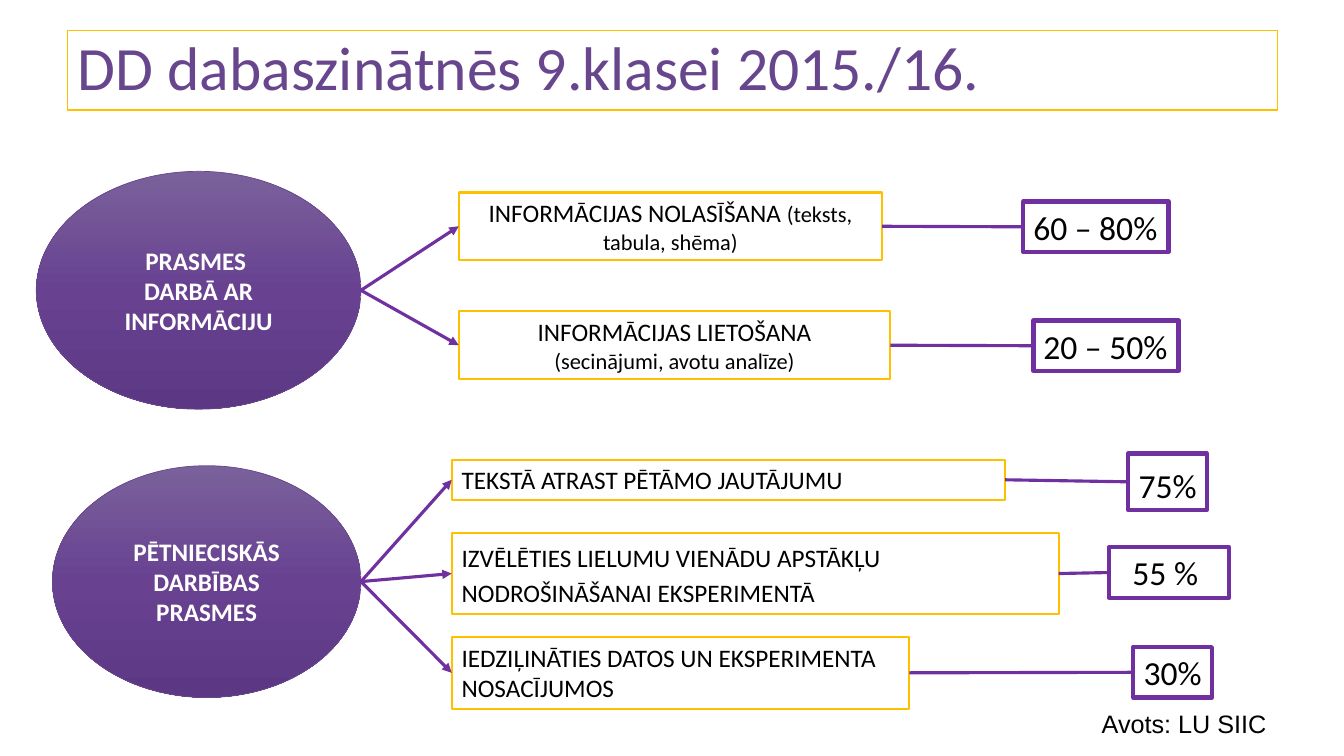
from copy import deepcopy
from pptx import Presentation
from pptx.dml.color import RGBColor
from pptx.enum.shapes import MSO_CONNECTOR, MSO_SHAPE
from pptx.enum.text import MSO_ANCHOR, MSO_AUTO_SIZE, PP_ALIGN as AL
from pptx.oxml import parse_xml
from pptx.oxml.ns import nsdecls, qn
from pptx.util import Pt

PX = 9144
GOLD, PURPLE, VIOLET, BLACK, WHITE = "FFC000", "7030A0", "68468D", "000000", "FFFFFF"
GRADIENT = [(0, "7A619B"), (0.5, "684291"), (1, "5C3884")]


def rgb(value):
    return RGBColor.from_string(value)


def write(sp, paragraphs, align, color=BLACK, font="Calibri", bold=False):
    tf = sp.text_frame
    tf.word_wrap = True
    for i, runs in enumerate(paragraphs):
        p = tf.add_paragraph() if i else tf.paragraphs[0]
        p.alignment = align
        for text, size in runs:
            r = p.add_run()
            r.text = text
            r.font.name, r.font.size, r.font.bold = font, Pt(size), bold
            r.font.color.rgb = rgb(color)
    return tf


prs = Presentation()
prs.slide_width, prs.slide_height = 1333 * PX, 750 * PX
s = prs.slides.add_slide(prs.slide_layouts[5])

title = s.shapes.title
title.left, title.top, title.width, title.height = [v * PX for v in (67, 30, 1200, 79)]
title.fill.solid()
title.fill.fore_color.rgb = rgb(WHITE)
title.line.color.rgb = rgb(GOLD)
title.line.width = Pt(1)
tf = write(title, [[("DD dabaszinātnēs 9.klasei 2015./16.", 44)]], AL.LEFT, VIOLET)
tf.vertical_anchor = MSO_ANCHOR.MIDDLE
tf.auto_size = MSO_AUTO_SIZE.NONE
tf.paragraphs[0].line_spacing = 0.9

# each row: skill box, its text, alignment, result box, its text, alignment, wrap, spaced boxes
skill_groups = [
    ((36, 170, 322, 236), ["PRASMES ", "DARBĀ AR INFORMĀCIJU"], [
        ((455, 191, 420, 67), [[("INFORMĀCIJAS NOLASĪŠANA ", 18), ("(teksts, tabula, shēma)", 16)]],
         AL.CENTER, (1015, 200, 144, 50), "60 – 80%", AL.LEFT, False, ()),
        ((455, 309, 428, 67), [[("INFORMĀCIJAS LIETOŠANA", 18)], [("(secinājumi, avotu analīze)", 16)]],
         AL.CENTER, (1025, 318, 144, 50), "20 – 50%", AL.LEFT, False, ()),
    ]),
    ((52, 462, 306, 230), ["PĒTNIECISKĀS DARBĪBAS PRASMES"], [
        ((448, 456, 549, 40), [[("TEKSTĀ ATRAST PĒTĀMO JAUTĀJUMU", 18)]],
         AL.LEFT, (1119, 450, 78, 56), "75% ", AL.CENTER, False, ("result",)),
        ((448, 529, 602, 80), [[("IZVĒLĒTIES LIELUMU VIENĀDU APSTĀKĻU NODROŠINĀŠANAI EKSPERIMENTĀ", 18)]],
         AL.LEFT, (1100, 543, 119, 50), "55 % ", AL.CENTER, True, ("skill",)),
        ((448, 632, 454, 71), [[("IEDZIĻINĀTIES DATOS UN EKSPERIMENTA NOSACĪJUMOS", 18)]],
         AL.LEFT, (1124, 642, 78, 50), "30%", AL.CENTER, False, ()),
    ]),
]

for oval_box, oval_lines, rows in skill_groups:
    shapes = s.shapes.add_group_shape().shapes
    oval = shapes.add_shape(MSO_SHAPE.OVAL, *[v * PX for v in oval_box])
    oval.shadow.inherit = False
    oval.fill.gradient()
    oval.fill.gradient_angle = 270
    stops = oval._element.spPr.find(".//" + qn("a:gsLst"))
    stops.insert(1, deepcopy(stops[0]))
    for stop, (position, color) in zip(oval.fill.gradient_stops, GRADIENT):
        stop.position = position
        stop.color.rgb = rgb(color)
    oval.line.color.rgb = rgb(VIOLET)
    oval.line.width = Pt(0.5)
    tf = write(oval, [[(line, 18)] for line in oval_lines], AL.CENTER, WHITE, bold=True)
    tf.vertical_anchor = MSO_ANCHOR.MIDDLE

    for skill_box, skill_text, skill_align, result_box, result, result_align, wrap, spaced in rows:
        boxes = {}
        for name, box, text, align, color, width, wraps in (
            ("skill", skill_box, skill_text, skill_align, GOLD, 1.5, True),
            ("result", result_box, [[(result, 24)]], result_align, PURPLE, 3, wrap),
        ):
            sp = shapes.add_shape(MSO_SHAPE.RECTANGLE, *[v * PX for v in box])
            sp.shadow.inherit = False
            sp.fill.background()
            sp.line.color.rgb = rgb(color)
            sp.line.width = Pt(width)
            tf = write(sp, text, align)
            tf.word_wrap = wraps
            tf.vertical_anchor = MSO_ANCHOR.TOP
            tf.auto_size = MSO_AUTO_SIZE.SHAPE_TO_FIT_TEXT
            if name in spaced:
                tf.paragraphs[0].line_spacing = 1.15
                tf.paragraphs[0].space_after = Pt(10)
            boxes[name] = sp

        start = oval.left + oval.width, oval.top + oval.height // 2
        arrow = shapes.add_connector(MSO_CONNECTOR.STRAIGHT, *start, *start)
        arrow.end_connect(boxes["skill"], 1)
        link = shapes.add_connector(MSO_CONNECTOR.STRAIGHT, *start, *start)
        link.begin_connect(boxes["result"], 1)
        link.end_connect(boxes["skill"], 3)
        for line in (arrow, link):
            line.line.color.rgb = rgb(PURPLE)
            line.line.width = Pt(2.25)
            line._element.spPr.append(parse_xml(f"<a:effectLst {nsdecls('a')}/>"))
        arrow.line._get_or_add_ln().append(parse_xml(f'<a:tailEnd {nsdecls("a")} type="triangle"/>'))

source = s.shapes.add_textbox(*[v * PX for v in (969, 698, 297, 40)])
tf = write(source, [[("Avots: LU SIIC", 18)]], AL.RIGHT, font="Arial")
tf.auto_size = MSO_AUTO_SIZE.SHAPE_TO_FIT_TEXT

prs.save("out.pptx")
